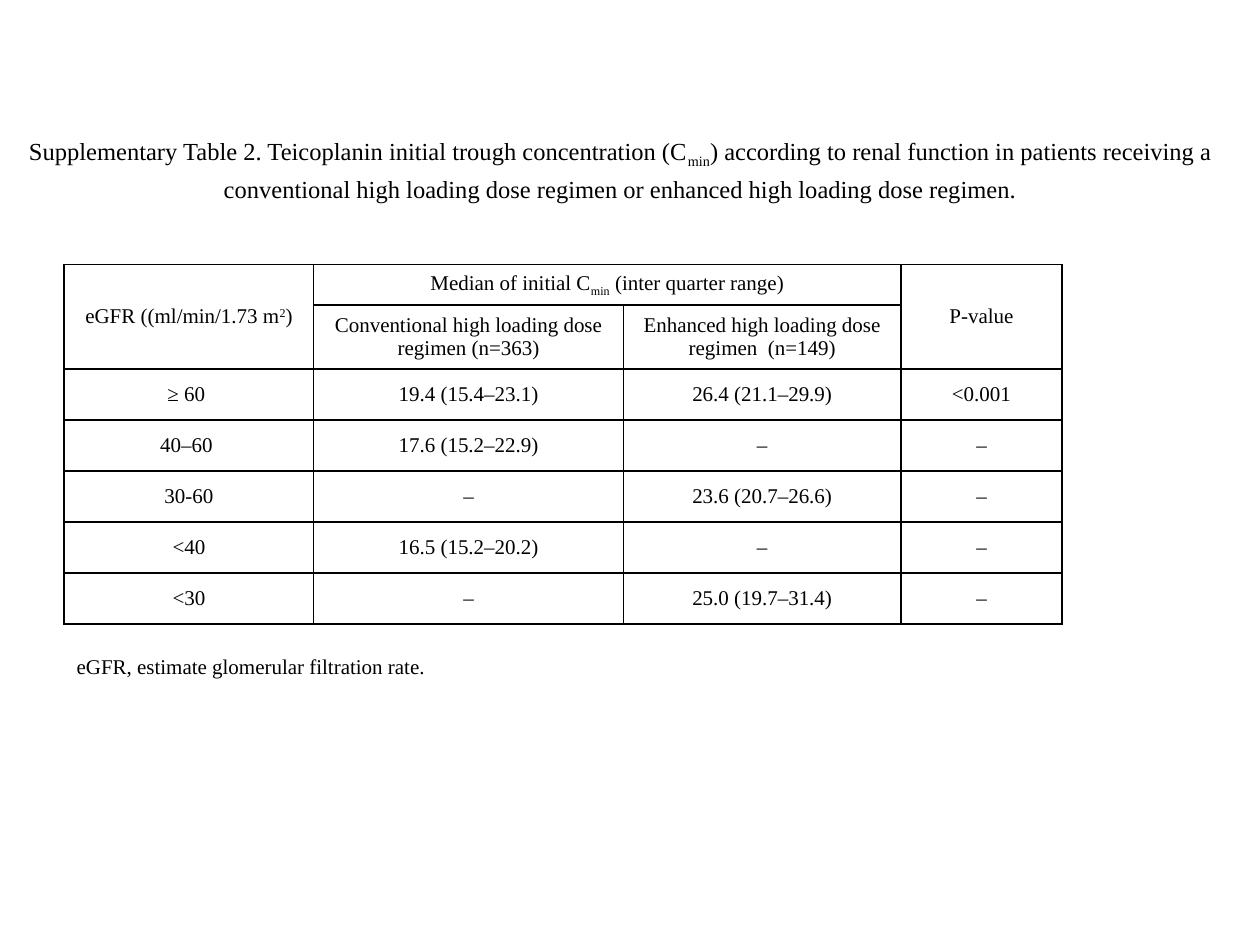
from pptx import Presentation
from pptx.dml.color import RGBColor
from pptx.enum.text import MSO_ANCHOR as ANCHOR, MSO_AUTO_SIZE as AUTO, PP_ALIGN as ALIGN
from pptx.oxml import parse_xml
from pptx.oxml.ns import nsdecls
from pptx.util import Inches, Pt

INK = "000000"


def add_runs(p, runs, size, align=ALIGN.CENTER):
    p.alignment = align
    for text, baseline in runs:
        r = p.add_run()
        r.text = text
        r.font.name = "Times New Roman"
        r.font.size = Pt(size)
        r.font.color.rgb = RGBColor.from_string(INK)
        if baseline:
            r._r.get_or_add_rPr().set("baseline", str(baseline * 1000))


def add_borders(cell):
    tcPr = cell._tc.get_or_add_tcPr()
    for i, side in enumerate(("lnL", "lnR", "lnT", "lnB")):
        tcPr.insert(i, parse_xml(
            f'<a:{side} {nsdecls("a")} w="{Pt(1)}"><a:solidFill>'
            f'<a:srgbClr val="{INK}"/></a:solidFill></a:{side}>'))


prs = Presentation()
prs.slide_width, prs.slide_height = Inches(10), Inches(7.5)
s = prs.slides.add_slide(prs.slide_layouts[5])

title = s.shapes.title
title.left, title.top = Inches(0.01), Inches(0.89)
title.width, title.height = Inches(9.83), Inches(0.87)
tf = title.text_frame
tf.word_wrap = True
tf.auto_size = AUTO.NONE
tf.vertical_anchor = ANCHOR.MIDDLE
p = tf.paragraphs[0]
p.line_spacing = 1.15
add_runs(p, [
    ("Supplementary Table 2. Teicoplanin initial trough concentration (C", 0),
    ("min", -25),
    (") according to renal function in patients receiving a conventional high "
     "loading dose regimen or enhanced high loading dose regimen.", 0),
], 14)

col_widths = [1.98, 2.46, 2.2, 1.28]
row_heights = [0.32, 0.51] + [0.405] * 5
rows = [
    [[("eGFR ((ml/min/1.73 m", 0), ("2", 30), (")", 0)],
     [("Median of initial C", 0), ("min", -25), (" (inter quarter range)", 0)],
     "", "P-value"],
    ["", "Conventional high loading dose regimen (n=363)",
     "Enhanced high loading dose regimen  (n=149)", ""],
    ["≥ 60 ", "19.4 (15.4–23.1)", "26.4 (21.1–29.9)", "<0.001"],
    ["40–60 ", "17.6 (15.2–22.9)", "–", "–"],
    ["30-60", "–", "23.6 (20.7–26.6)", "–"],
    ["<40", "16.5 (15.2–20.2)", "–", "–"],
    ["<30", "–", "25.0 (19.7–31.4)", "–"],
]
table = s.shapes.add_table(
    len(rows), len(col_widths), Inches(0.51), Inches(2.1),
    Inches(sum(col_widths)), Inches(sum(row_heights))).table
table.first_row = table.horz_banding = False
for column, width in zip(table.columns, col_widths):
    column.width = Inches(width)
for row, height in zip(table.rows, row_heights):
    row.height = Inches(height)
for first, last in (((0, 0), (1, 0)), ((0, 1), (0, 2)), ((0, 3), (1, 3))):
    table.cell(*first).merge(table.cell(*last))

for i, row in enumerate(rows):
    for j, content in enumerate(row):
        cell = table.cell(i, j)
        cell.fill.background()
        cell.vertical_anchor = ANCHOR.MIDDLE
        add_borders(cell)
        if content:
            runs = [(content, 0)] if isinstance(content, str) else content
            add_runs(cell.text_frame.paragraphs[0], runs, 12)

note = s.shapes.add_textbox(Inches(0.51), Inches(5.14), Inches(3.54), Inches(0.3))
tf = note.text_frame
tf.word_wrap = True
tf.auto_size = AUTO.SHAPE_TO_FIT_TEXT
add_runs(tf.paragraphs[0], [("eGFR, estimate glomerular filtration rate.", 0)], 12, ALIGN.LEFT)

prs.save("out.pptx")
